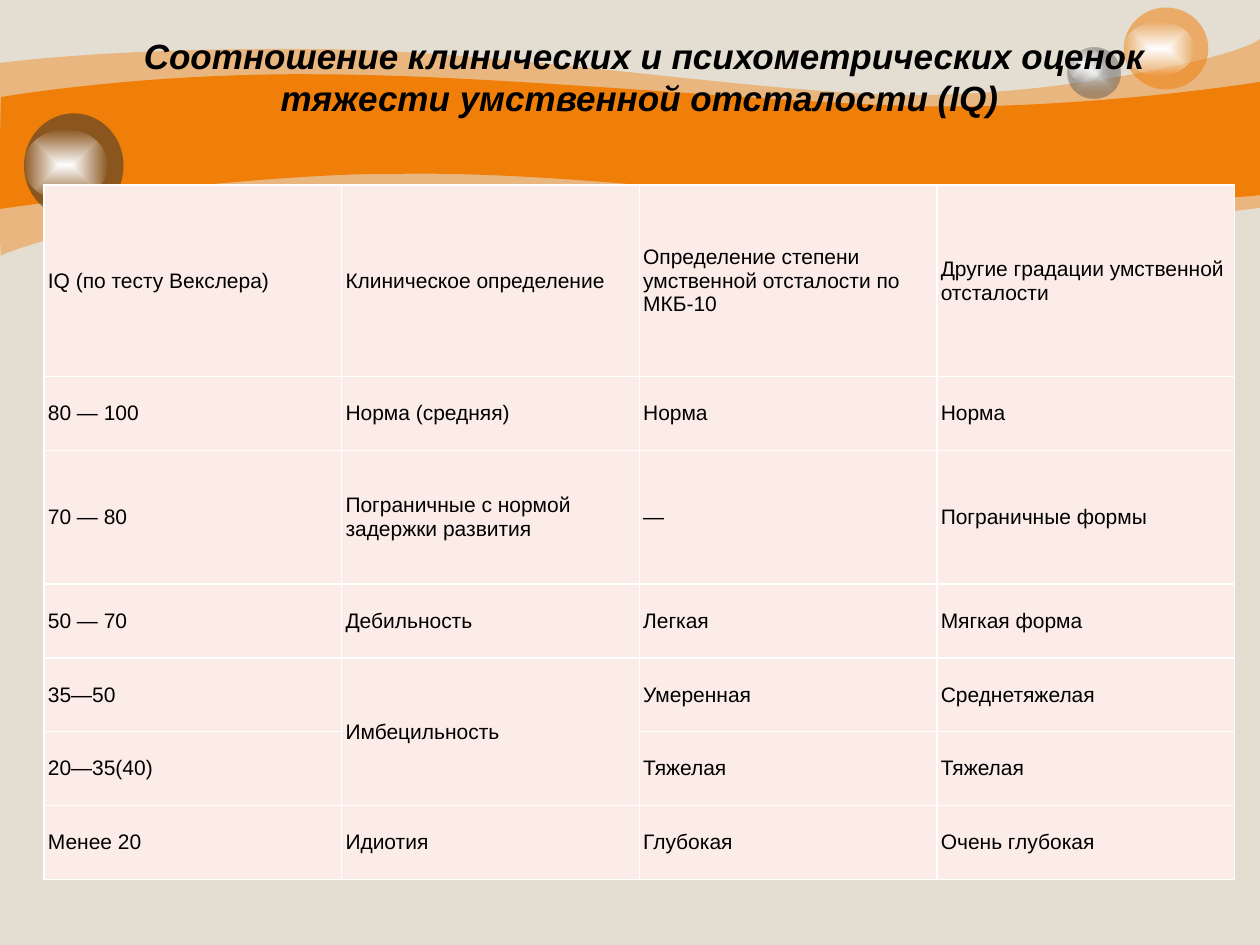
import lxml.etree
import pptx
import pptx.dml.color
import pptx.enum.shapes
import pptx.enum.text
import pptx.oxml
import pptx.oxml.ns
import pptx.util
from pptx.util import Inches

COLORS = {
    "background": "E3DED1",
    "orange": "F07F09",
    "dark": "323232",
    "gray": "E1E1E1",
    "white": "FFFFFF",
    "cell": "FCECE7",
    "text": "000000",
}
FONT = "Arial"

PALE_WAVE = [
    [(0, 0.5)],
    [(0.24, 0.47), (1.07, 0.38), (2.47, 0.39)],
    [(3.86, 0.39), (5.75, 0.7), (6.99, 0.75)],
    [(8.22, 0.8), (9.8, 0.47), (10, 0.31)],
    [(10, 1.65)],
    [(8.58, 1.83), (7.87, 1.77), (7.05, 1.75)],
    [(6.22, 1.73), (5.15, 1.51), (3.43, 1.48)],
    [(1.72, 1.44), (0.04, 1.99), (0.01, 2.03)],
    [(-0.01, 2.08), (0, 0.75), (0, 0.5)],
]
BRIGHT_WAVE = [
    [(0.01, 0.77)],
    [(0.02, 0.77), (1.1, 0.58), (2.48, 0.59)],
    [(3.86, 0.59), (5.95, 0.8), (7.18, 0.84)],
    [(8.41, 0.88), (9.76, 0.69), (10, 0.65)],
    [(10, 1.55)],
    [(8.53, 1.68), (7.65, 1.65), (6.82, 1.61)],
    [(5.99, 1.58), (4.47, 1.36), (3.17, 1.38)],
    [(2.03, 1.37), (-0.02, 1.66), (-0.01, 1.66)],
    [(0, 1.66), (0, 0.77), (0.01, 0.77)],
]
BALLS = [
    ((8.47, 0.38, 0.42, 0.4), [("gray", 100), ("dark", 31)]),
    ((8.92, 0.06, 0.67, 0.65), [("orange", 53)]),
    ((0.19, 0.9, 0.79, 0.83), [("dark", 53)]),
]
HIGHLIGHTS = [
    (8.47, 0.38, 0.28, 0.27),
    (8.92, 0.17, 0.56, 0.43),
    (0.19, 1.03, 0.66, 0.56),
]
TITLE = "Соотношение клинических и психометрических оценок тяжести умственной отсталости (IQ) "
TABLE_FRAME = (0.35, 1.47, 9.45, 5.51)
TALL_ROWS = {0: 1.52, 2: 1.06}
ROWS = [
    ["IQ (по тесту Векслера)", "Клиническое определение",
     "Определение степени умственной отсталости по МКБ-10", "Другие градации умственной отсталости"],
    ["80 — 100", "Норма (средняя)", "Норма", "Норма"],
    ["70 — 80", "Пограничные с нормой задержки развития", "—", "Пограничные формы"],
    ["50 — 70", "Дебильность", "Легкая", "Мягкая форма"],
    ["35—50", "Имбецильность", "Умеренная", "Среднетяжелая"],
    ["20—35(40)", "", "Тяжелая", "Тяжелая"],
    ["Менее 20", "Идиотия", "Глубокая", "Очень глубокая"],
]


def rgb(name):
    """Return the named colour as an RGBColor."""
    return pptx.dml.color.RGBColor.from_string(COLORS[name])


def add_child(parent, tag, **attributes):
    """Append a DrawingML child element and return it."""
    child = lxml.etree.SubElement(parent, pptx.oxml.ns.qn(tag))
    for key, value in attributes.items():
        child.set(key, str(value))
    return child


def paint(shape, color, opacity=100):
    """Give a shape a plain fill without line or shadow."""
    shape.shadow.inherit = False
    shape.line.fill.background()
    shape.fill.solid()
    shape.fill.fore_color.rgb = rgb(color)
    if opacity < 100:
        color_element = shape.element.spPr.find(".//" + pptx.oxml.ns.qn("a:srgbClr"))
        add_child(color_element, "a:alpha", val=opacity * 1000)


def paint_glow(shape, stops):
    """Give a shape a gradient that spreads from its centre."""
    paint(shape, stops[0][0])
    solid = shape.element.spPr.find(pptx.oxml.ns.qn("a:solidFill"))
    gradient = pptx.oxml.parse_xml(f'<a:gradFill {pptx.oxml.ns.nsdecls("a")} rotWithShape="1"/>')
    stop_list = add_child(gradient, "a:gsLst")
    for position, (color, opacity) in zip((0, 100000), stops):
        stop = add_child(stop_list, "a:gs", pos=position)
        color_element = add_child(stop, "a:srgbClr", val=COLORS[color])
        if opacity < 100:
            add_child(color_element, "a:alpha", val=opacity * 1000)
    spread = add_child(gradient, "a:path", path="shape")
    add_child(spread, "a:fillToRect", l=50000, t=50000, r=50000, b=50000)
    solid.getparent().replace(solid, gradient)


def bend_sides(shape, segments):
    """Join each three line steps of a segment into one cubic curve."""
    sides = iter(list(shape.element.iter(pptx.oxml.ns.qn("a:lnTo"))))
    for segment in segments:
        steps = [next(sides) for _ in segment]
        if len(steps) == 3:
            curve = pptx.oxml.parse_xml(f'<a:cubicBezTo {pptx.oxml.ns.nsdecls("a")}/>')
            steps[0].addprevious(curve)
            for step in steps:
                curve.append(step[0])
                step.getparent().remove(step)


def add_wave(page, outline, opacity=100):
    """Add an orange band with curved edges."""
    corners = [(Inches(x), Inches(y)) for segment in outline for x, y in segment]
    builder = page.shapes.build_freeform(*corners[0])
    builder.add_line_segments(corners[1:], close=True)
    wave = builder.convert_to_shape()
    bend_sides(wave, outline[1:])
    paint(wave, "orange", opacity)


def add_ball(page, frame, stops):
    """Add an ellipse with a plain or a gradient fill."""
    ball = page.shapes.add_shape(pptx.enum.shapes.MSO_SHAPE.OVAL, *map(Inches, frame))
    if len(stops) == 1:
        paint(ball, *stops[0])
    else:
        paint_glow(ball, stops)


def format_runs(paragraph, size, bold=False, italic=False):
    """Set the font of every run in a paragraph."""
    for span in paragraph.runs:
        span.font.name = FONT
        span.font.size = pptx.util.Pt(size)
        span.font.bold = bold
        span.font.italic = italic
        span.font.color.rgb = rgb("text")


def set_title(page):
    """Fill the title placeholder and bring it above the waves."""
    title = page.shapes.title
    title.left, title.top, title.width, title.height = map(Inches, (0.51, 0.21, 9.21, 0.79))
    frame = title.text_frame
    frame.text = TITLE
    frame.word_wrap = True
    frame.vertical_anchor = pptx.enum.text.MSO_ANCHOR.MIDDLE
    frame.paragraphs[0].alignment = pptx.enum.text.PP_ALIGN.CENTER
    format_runs(frame.paragraphs[0], 20, bold=True, italic=True)
    title.element.getparent().append(title.element)


def format_cell(cell, text):
    """Write a table cell with white borders and a pale fill."""
    cell.text = text
    cell.vertical_anchor = pptx.enum.text.MSO_ANCHOR.MIDDLE
    cell.margin_left = cell.margin_right = cell.margin_top = cell.margin_bottom = Inches(0.03)
    format_runs(cell.text_frame.paragraphs[0], 12)
    properties = cell._tc.get_or_add_tcPr()
    for side in ("a:lnL", "a:lnR", "a:lnT", "a:lnB"):
        border = add_child(properties, side, w=pptx.util.Pt(1))
        add_child(add_child(border, "a:solidFill"), "a:srgbClr", val=COLORS["white"])
    cell.fill.solid()
    cell.fill.fore_color.rgb = rgb("cell")


def add_grades_table(page):
    """Add the table of clinical and psychometric grades."""
    table = page.shapes.add_table(len(ROWS), len(ROWS[0]), *map(Inches, TABLE_FRAME)).table
    low_height = (TABLE_FRAME[3] - sum(TALL_ROWS.values())) / (len(ROWS) - len(TALL_ROWS))
    for row_index, texts in enumerate(ROWS):
        table.rows[row_index].height = Inches(TALL_ROWS.get(row_index, low_height))
        for column_index, text in enumerate(texts):
            format_cell(table.cell(row_index, column_index), text)
    table.cell(4, 1).merge(table.cell(5, 1))


def main():
    """Build the slide and save the deck."""
    deck = pptx.Presentation()
    deck.slide_width, deck.slide_height = Inches(10), Inches(7.5)
    page = deck.slides.add_slide(deck.slide_layouts[5])
    page.background.fill.solid()
    page.background.fill.fore_color.rgb = rgb("background")
    add_wave(page, PALE_WAVE, 41)
    add_wave(page, BRIGHT_WAVE)
    for (frame, stops), highlight in zip(BALLS, HIGHLIGHTS):
        add_ball(page, frame, stops)
        add_ball(page, highlight, [("white", 100), ("white", 0)])
    set_title(page)
    add_grades_table(page)
    deck.save("out.pptx")


if __name__ == "__main__":
    main()
